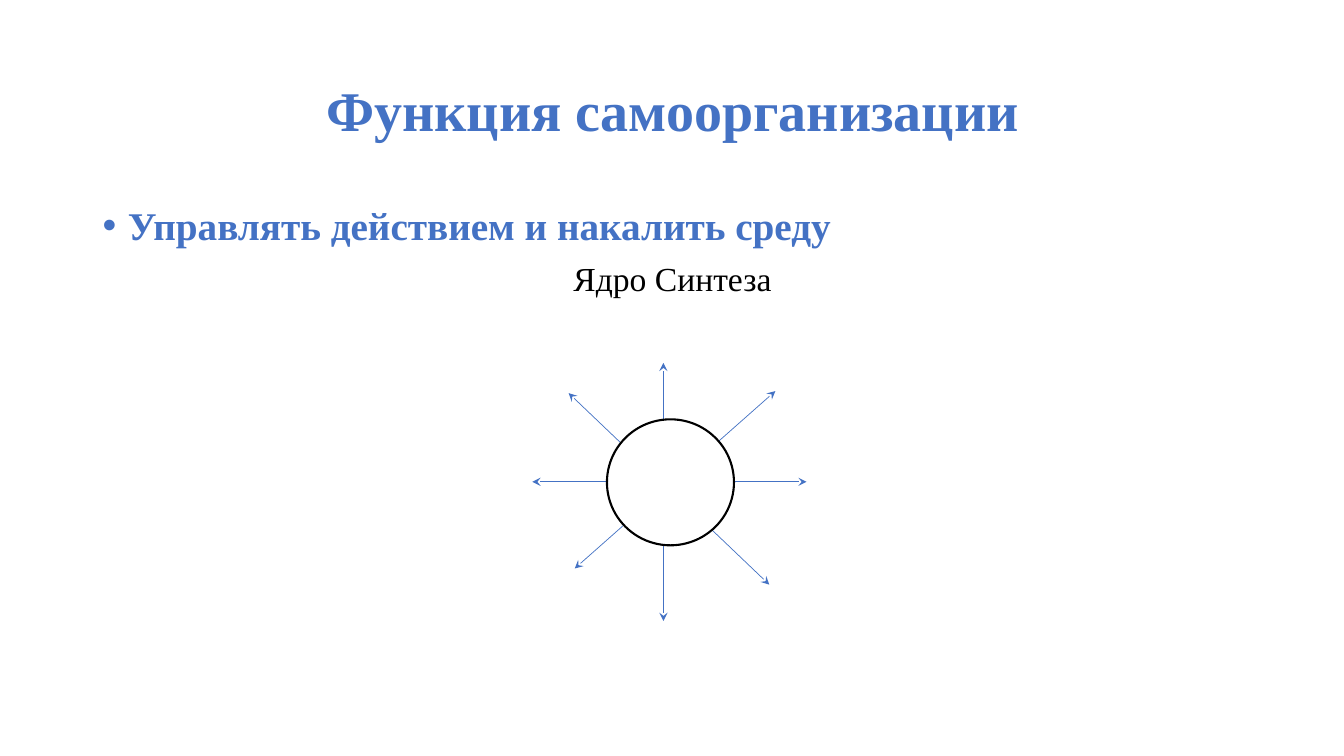
import pptx
import pptx.dml.color
import pptx.enum.shapes
import pptx.enum.text
import pptx.util
from lxml import etree

Inches, Pt = pptx.util.Inches, pptx.util.Pt
ALIGN = pptx.enum.text.PP_ALIGN
BLUE = "4472C4"


def color(code):
    return pptx.dml.color.RGBColor.from_string(code)


def write(par, text, size, ink=BLUE, bold=True, align=ALIGN.CENTER, bullet=None, before=0):
    """Fill and format one paragraph."""
    par.alignment = align
    par.line_spacing = 0.9
    par.space_before = Pt(before)
    if bullet:
        props = par._p.get_or_add_pPr()
        props.set("marL", str(Inches(0.25)))
        props.set("indent", str(Inches(-0.25)))
        font = etree.SubElement(props, pptx.oxml.ns.qn("a:buFont"))
        font.set("typeface", "Arial")
        mark = etree.SubElement(props, pptx.oxml.ns.qn("a:buChar"))
        mark.set("char", bullet)
    run = par.add_run()
    run.text = text
    run.font.name = "Times New Roman"
    run.font.size = Pt(size)
    run.font.bold = bold
    run.font.color.rgb = color(ink)


deck = pptx.Presentation()
deck.slide_width, deck.slide_height = Inches(13.33), Inches(7.5)
slide = deck.slides.add_slide(deck.slide_layouts[5])
shapes = slide.shapes
left, width = Inches(0.92), Inches(11.5)

# Title
title = shapes.title
title.left, title.top, title.width, title.height = left, Inches(0.4), width, Inches(1.45)
title.text_frame.vertical_anchor = pptx.enum.text.MSO_ANCHOR.MIDDLE
title.text_frame.auto_size = pptx.enum.text.MSO_AUTO_SIZE.NONE
write(title.text_frame.paragraphs[0], "Функция самоорганизации", 40)

# Body
body = shapes.add_textbox(left, Inches(2), width, Inches(4.76)).text_frame
body.word_wrap = True
write(body.paragraphs[0], "Управлять действием и накалить среду", 28,
      align=ALIGN.LEFT, bullet="•")
write(body.add_paragraph(), "Ядро Синтеза", 24, ink="000000", bold=False, before=10)

# Rays: each line crosses the core and points outward at both ends
rays = [
    (5.28, 4.78, 8, 4.78),
    (5.7, 5.64, 7.69, 3.88),
    (6.58, 6.16, 6.58, 3.6),
    (7.63, 5.8, 5.64, 3.9),
]
for ray in rays:
    line = shapes.add_connector(pptx.enum.shapes.MSO_CONNECTOR.STRAIGHT, *map(Inches, ray))
    line.line.color.rgb = color(BLUE)
    line.line.width = Pt(0.5)
    for end in ("a:headEnd", "a:tailEnd"):
        tip = etree.SubElement(line.line._get_or_add_ln(), pptx.oxml.ns.qn(end))
        tip.set("type", "stealth")
    etree.SubElement(line._element.spPr, pptx.oxml.ns.qn("a:effectLst"))

# Core
core = shapes.add_shape(pptx.enum.shapes.MSO_SHAPE.OVAL,
                        Inches(6.02), Inches(4.16), Inches(1.26), Inches(1.25))
core.shadow.inherit = False
core.fill.solid()
core.fill.fore_color.rgb = color("FFFFFF")
core.line.color.rgb = color("000000")
core.line.width = Pt(1.5)

deck.save("out.pptx")
